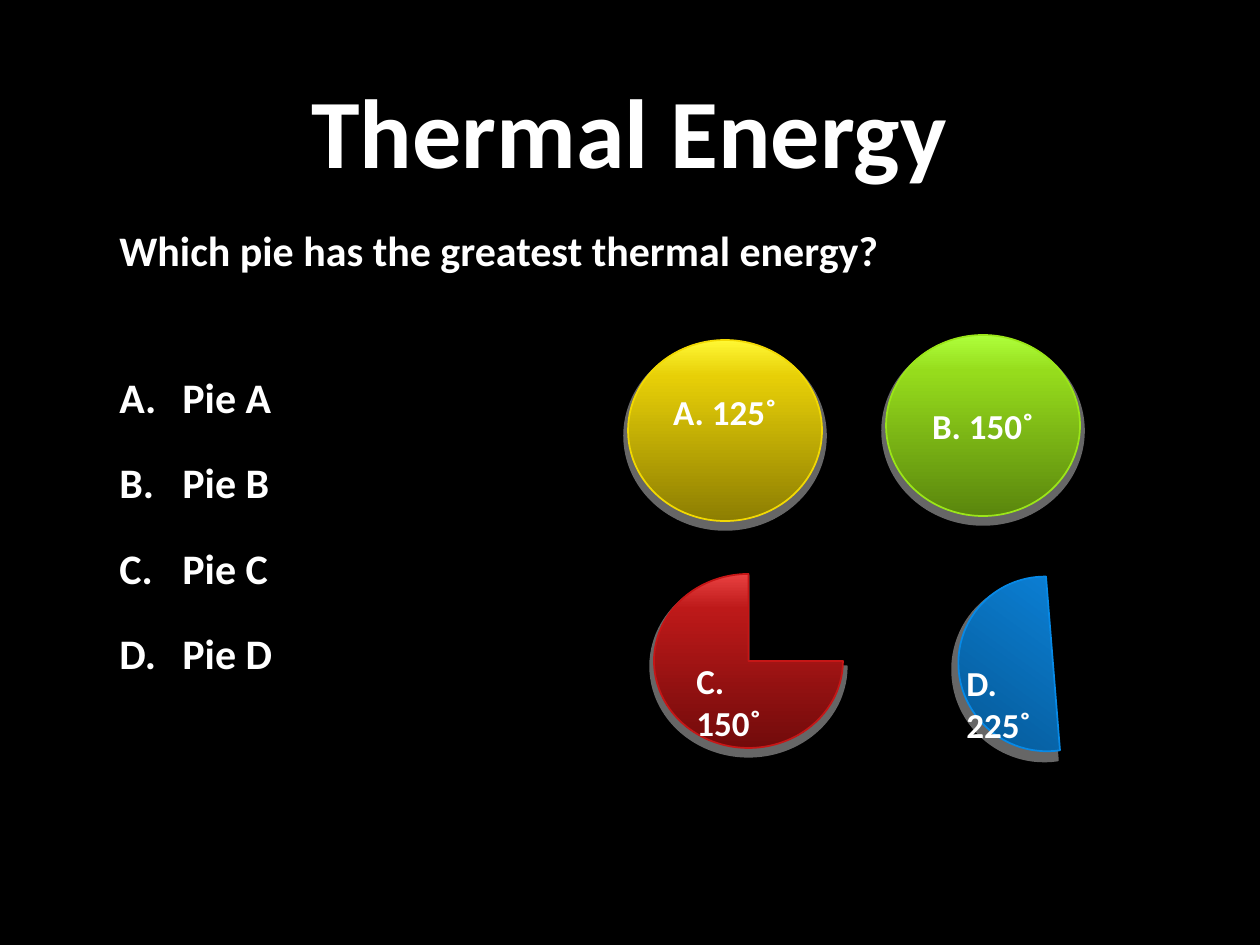
from copy import deepcopy

from lxml.etree import SubElement
from pptx import Presentation
from pptx.dml.color import RGBColor
from pptx.enum.shapes import MSO_SHAPE
from pptx.enum.text import MSO_ANCHOR, PP_ALIGN
from pptx.oxml.ns import qn
from pptx.util import Pt

EMU_PER_PX = 914400 / 126

BLACK = RGBColor(0x00, 0x00, 0x00)
WHITE = RGBColor(0xFF, 0xFF, 0xFF)
# Each pie: outline, then the gradient from top to bottom
YELLOW = [RGBColor.from_string(c) for c in ("F2D902", "FFF834", "E7CF07", "8D7E02")]
GREEN = [RGBColor.from_string(c) for c in ("9BE618", "AEFF3B", "96DC1C", "5A860D")]
RED = [RGBColor.from_string(c) for c in ("C61616", "E94141", "BD1919", "720B0B")]
BLUE = [RGBColor.from_string(c) for c in ("0789E6", "3799FF", "0C84DC", "044F86")]
STOPS = (0, 0.2, 1)


def px(n):
    return round(n * EMU_PER_PX)


class Deck:
    """Holds the text style and the current slide."""

    font = {"name": "Calibri", "bold": True}

    def __init__(self, width, height):
        self.prs = Presentation()
        self.prs.slide_width, self.prs.slide_height = px(width), px(height)

    def add_slide(self, color):
        self.s = self.prs.slides.add_slide(self.prs.slide_layouts[6])
        fill = self.s.background.fill
        fill.solid()
        fill.fore_color.rgb = color

    def add_text(self, p, text, size):
        r = p.add_run()
        r.text = text
        for name, value in {**self.font, "size": Pt(size)}.items():
            setattr(r.font, name, value)
        r.font.color.rgb = WHITE

    def text_box(self, box, text, size, align=PP_ALIGN.LEFT, anchor=MSO_ANCHOR.TOP):
        tf = self.s.shapes.add_textbox(*map(px, box)).text_frame
        tf.word_wrap = True
        tf.vertical_anchor = anchor
        p = tf.paragraphs[0]
        p.alignment = align
        self.add_text(p, text, size)

    def lettered_list(self, box, items, size, gap, indent):
        tf = self.s.shapes.add_textbox(*map(px, box)).text_frame
        tf.word_wrap = True
        for i, item in enumerate(items):
            p = tf.add_paragraph() if i else tf.paragraphs[0]
            pPr = p._p.get_or_add_pPr()
            pPr.set("marL", str(px(indent)))
            pPr.set("indent", str(-px(indent)))
            SubElement(pPr, qn("a:buFont"), typeface="+mj-lt")
            SubElement(pPr, qn("a:buAutoNum"), type="alphaUcPeriod")
            if i:
                p.space_before = Pt(gap)
            self.add_text(p, item, size)

    def pie(self, kind, box, colors, angles=(), rotation=0, label=None, lift=0):
        """Draw a shaded pie; angles are in degrees, lift raises the label."""
        sp = self.s.shapes.add_shape(kind, *map(px, box))
        for i, angle in enumerate(angles):
            sp.adjustments[i] = angle * 0.6
        sp.rotation = rotation
        outline, *shades = colors
        self.shade(sp, shades)
        sp.line.color.rgb = outline
        sp.line.width = Pt(1)
        self.cast_shadow(sp)
        if label:
            tf = sp.text_frame
            tf.word_wrap = True
            tf.vertical_anchor = MSO_ANCHOR.MIDDLE
            tf.margin_bottom += px(2 * lift)
            p = tf.paragraphs[0]
            p.alignment = PP_ALIGN.CENTER
            self.add_text(p, label, 20)

    def shade(self, sp, shades):
        fill = sp.fill
        fill.gradient()
        fill.gradient_angle = 270
        gs_list = sp._element.spPr.find(qn("a:gradFill")).find(qn("a:gsLst"))
        gs_list.append(deepcopy(gs_list[0]))
        for stop, position, color in zip(fill.gradient_stops, STOPS, shades):
            stop.position = position
            stop.color.rgb = color

    def cast_shadow(self, sp):
        sp.shadow.inherit = False
        effects = sp._element.spPr.find(qn("a:effectLst"))
        shadow = SubElement(effects, qn("a:outerShdw"), blurRad="0",
                            dist=str(Pt(3)), dir="5400000", sx="104000",
                            sy="104000", algn="ctr", rotWithShape="0")
        color = SubElement(shadow, qn("a:srgbClr"), val="808080")
        SubElement(color, qn("a:alpha"), val="80000")


def main():
    deck = Deck(1260, 945)
    deck.add_slide(BLACK)
    deck.text_box((107, 15, 1045, 228), "Thermal Energy", 56,
                  PP_ALIGN.CENTER, MSO_ANCHOR.MIDDLE)
    deck.lettered_list((107, 365, 244, 365), [f"Pie {c}" for c in "ABCD"],
                       size=24, gap=20, indent=63)

    deck.pie(MSO_SHAPE.OVAL, (628, 340, 194, 181), YELLOW,
             label="A. 125˚", lift=19)
    deck.pie(MSO_SHAPE.OVAL, (886, 335, 194, 181), GREEN, label="B. 150˚")
    deck.pie(MSO_SHAPE.PIE, (654, 574, 189, 174), RED, angles=(0, 270))
    deck.pie(MSO_SHAPE.CHORD, (958, 577, 176, 174), BLUE,
             angles=(45, 234.2), rotation=35.8)

    deck.text_box((684, 653, 120, 55), "C. 150˚", 20)
    deck.text_box((954, 655, 124, 55), "D. 225˚", 20)
    deck.text_box((107, 218, 966, 63),
                  "Which pie has the greatest thermal energy?", 24)
    deck.prs.save("out.pptx")


if __name__ == "__main__":
    main()
